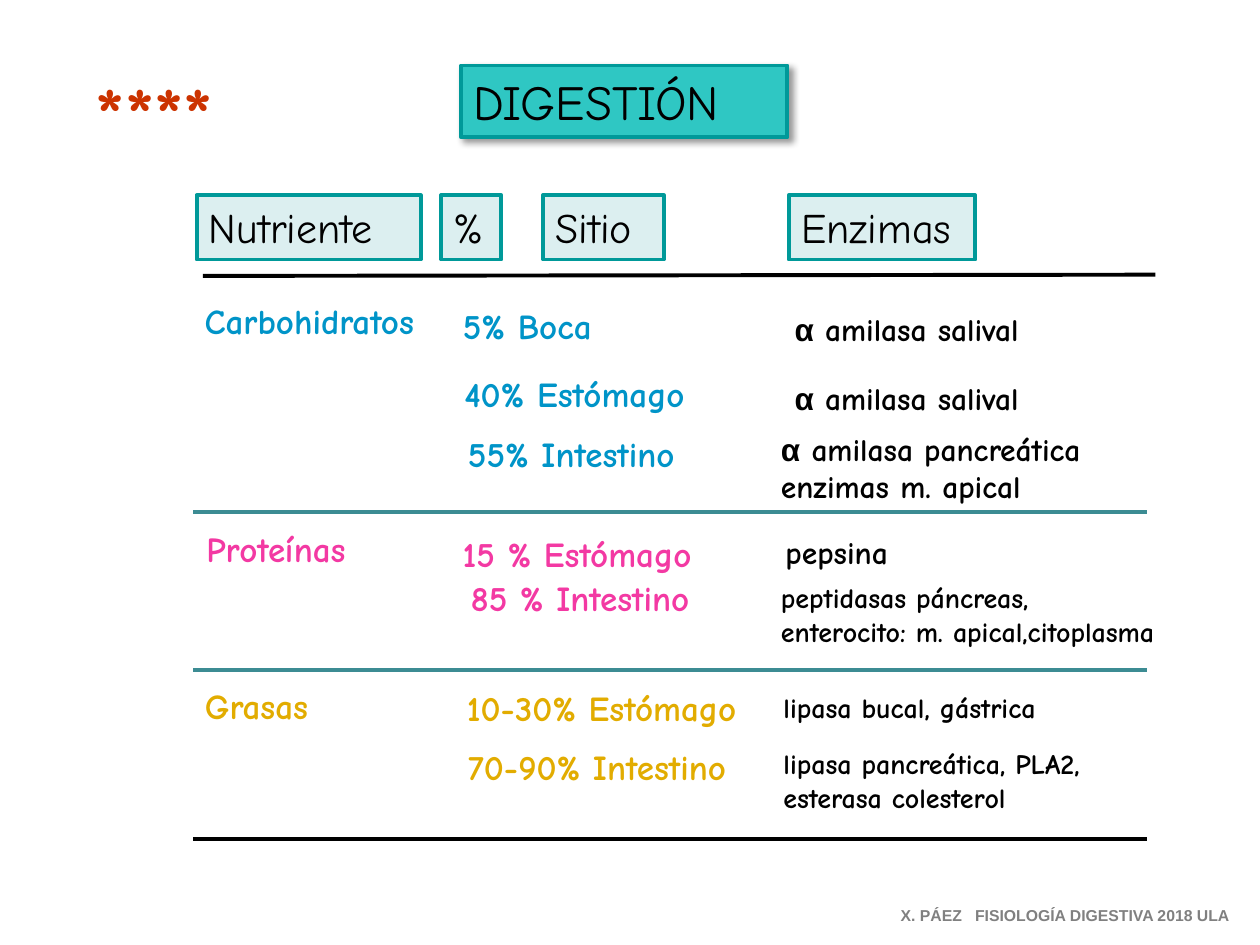
from lxml import etree
from pptx import Presentation
from pptx.dml.color import RGBColor
from pptx.enum import shapes, text
from pptx.oxml import parse_xml
from pptx.oxml.ns import nsdecls, qn
from pptx.util import Inches, Pt

HAND = "Comic Neue"
BLACK, TEAL, RULE = "000000", "009999", "3C8C93"
BLUE, PINK, GOLD = "0094C8", "F339A3", "E2AC00"
LEFT, CENTER = text.PP_ALIGN.LEFT, text.PP_ALIGN.CENTER


def color(code):
    return RGBColor.from_string(code)


def shadow(blur, dist, alpha):
    return parse_xml(
        f'<a:effectLst {nsdecls("a")}><a:outerShdw blurRad="{Pt(blur)}" '
        f'dist="{Pt(dist)}" dir="2700000" algn="tl" rotWithShape="0">'
        f'<a:srgbClr val="{BLACK}"><a:alpha val="{alpha * 1000}"/></a:srgbClr>'
        '</a:outerShdw></a:effectLst>')


def style(run, size, code, bold, font=HAND):
    run.font.size = Pt(size)
    run.font.bold = bold
    run.font.name = font
    run.font.color.rgb = color(code)


def label(slide, words, x, y, w, h, size, code=BLACK, align=LEFT,
          font=HAND, wrap=False):
    """Bold text; a Greek alpha is set in Arial."""
    box = slide.shapes.add_textbox(Inches(x), Inches(y), Inches(w), Inches(h))
    frame = box.text_frame
    frame.word_wrap = wrap
    frame.text = words
    for par in frame.paragraphs:
        par.alignment = align
        if par.text.startswith("α"):
            rest = par.text[1:]
            par.runs[0].text = "α"
            style(par.runs[0], size, code, True, "Arial")
            run = par.add_run()
            run.text = rest
            style(run, size, code, True, font)
        else:
            style(par.runs[0], size, code, True, font)
    return box


def panel(slide, words, x, y, w, h, size, fill):
    """Framed heading."""
    box = slide.shapes.add_shape(shapes.MSO_SHAPE.RECTANGLE, Inches(x),
                                 Inches(y), Inches(w), Inches(h))
    box.shadow.inherit = False
    box.fill.solid()
    box.fill.fore_color.rgb = color(fill)
    box.line.color.rgb = color(TEAL)
    box.line.width = Pt(2.25)
    frame = box.text_frame
    frame.word_wrap = True
    frame.vertical_anchor = text.MSO_ANCHOR.TOP
    frame.text = words
    frame.paragraphs[0].alignment = LEFT
    style(frame.paragraphs[0].runs[0], size, BLACK, False)
    return box


def rule(slide, x1, y1, x2, y2, code):
    line = slide.shapes.add_connector(shapes.MSO_CONNECTOR.STRAIGHT, Inches(x1),
                                      Inches(y1), Inches(x2), Inches(y2))
    line.line.color.rgb = color(code)
    line.line.width = Pt(2.25)
    etree.SubElement(line._element.spPr, qn("a:effectLst"))


def main():
    deck = Presentation()
    deck.slide_width, deck.slide_height = Inches(10), Inches(7.5)
    slide = deck.slides.add_slide(deck.slide_layouts[6])

    # Title and stars
    title = panel(slide, "DIGESTIÓN", 3.66, 0.52, 2.59, 0.57, 28, "2FC7C3")
    props = title._element.spPr
    props.replace(props.find(qn("a:effectLst")), shadow(4, 3, 40))
    stars = label(slide, "****", 0.47, 0.47, 1.51, 0.84, 44, "CC3300", CENTER)
    font = stars.text_frame.paragraphs[0].runs[0].font
    font._element.find(qn("a:solidFill")).addnext(shadow(0, 3, 100))

    # Column headings
    for words, x, w in (("Nutriente", 1.56, 1.78), ("%", 3.5, 0.48),
                        ("Sitio", 4.31, 0.96), ("Enzimas", 6.26, 1.48)):
        panel(slide, words, x, 1.55, w, 0.51, 24, "DCEFF0")

    # Rules between the groups
    rule(slide, 9.17, 2.18, 1.61, 2.19, BLACK)
    for y, code in ((4.06, RULE), (5.32, RULE), (6.66, BLACK)):
        rule(slide, 9.1, y, 1.53, y, code)

    # Nutrients, then share and site
    for words, x, y, w, code in (
            ("Carbohidratos", 1.41, 2.33, 2.09, BLUE),
            ("Proteínas", 1.47, 4.14, 1.44, PINK),
            ("Grasas", 1.48, 5.38, 1.11, GOLD),
            ("5% Boca", 3.51, 2.37, 1.35, BLUE),
            ("40% Estómago", 3.48, 2.91, 2.16, BLUE),
            ("55% Intestino", 3.47, 3.38, 2.13, BLUE),
            ("15 % Estómago", 3.44, 4.18, 2.28, PINK),
            ("85 % Intestino", 3.48, 4.53, 2.25, PINK),
            ("10-30% Estómago", 3.44, 5.4, 2.67, GOLD),
            ("70-90% Intestino", 3.42, 5.87, 2.64, GOLD)):
        label(slide, words, x, y, w, 0.44, 20, code, CENTER)

    # Enzymes
    for words, x, y, w, h, size, align in (
            ("α amilasa salival", 6.1, 2.41, 2.19, 0.4, 18, CENTER),
            ("α amilasa salival", 6.1, 2.96, 2.19, 0.4, 18, CENTER),
            ("α amilasa pancreática\nenzimas m. apical",
             6.1, 3.36, 2.86, 0.71, 18, LEFT),
            ("pepsina", 6.1, 4.18, 1.08, 0.4, 18, CENTER),
            ("peptidasas páncreas,\nenterocito: m. apical,citoplasma",
             6.1, 4.56, 3.7, 0.64, 16, LEFT),
            ("lipasa bucal, gástrica", 6.12, 5.43, 2.5, 0.37, 16, LEFT),
            ("lipasa pancreática, PLA2,\nesterasa colesterol",
             6.12, 5.88, 2.96, 0.64, 16, LEFT)):
        label(slide, words, x, y, w, h, size, align=align, wrap=w > 3)

    # Footer
    label(slide, "X. PÁEZ   FISIOLOGÍA DIGESTIVA 2018 ULA", 7.05, 7.14, 2.84,
          0.25, 9, "808080", font="Arial")

    deck.save("out.pptx")


if __name__ == "__main__":
    main()
